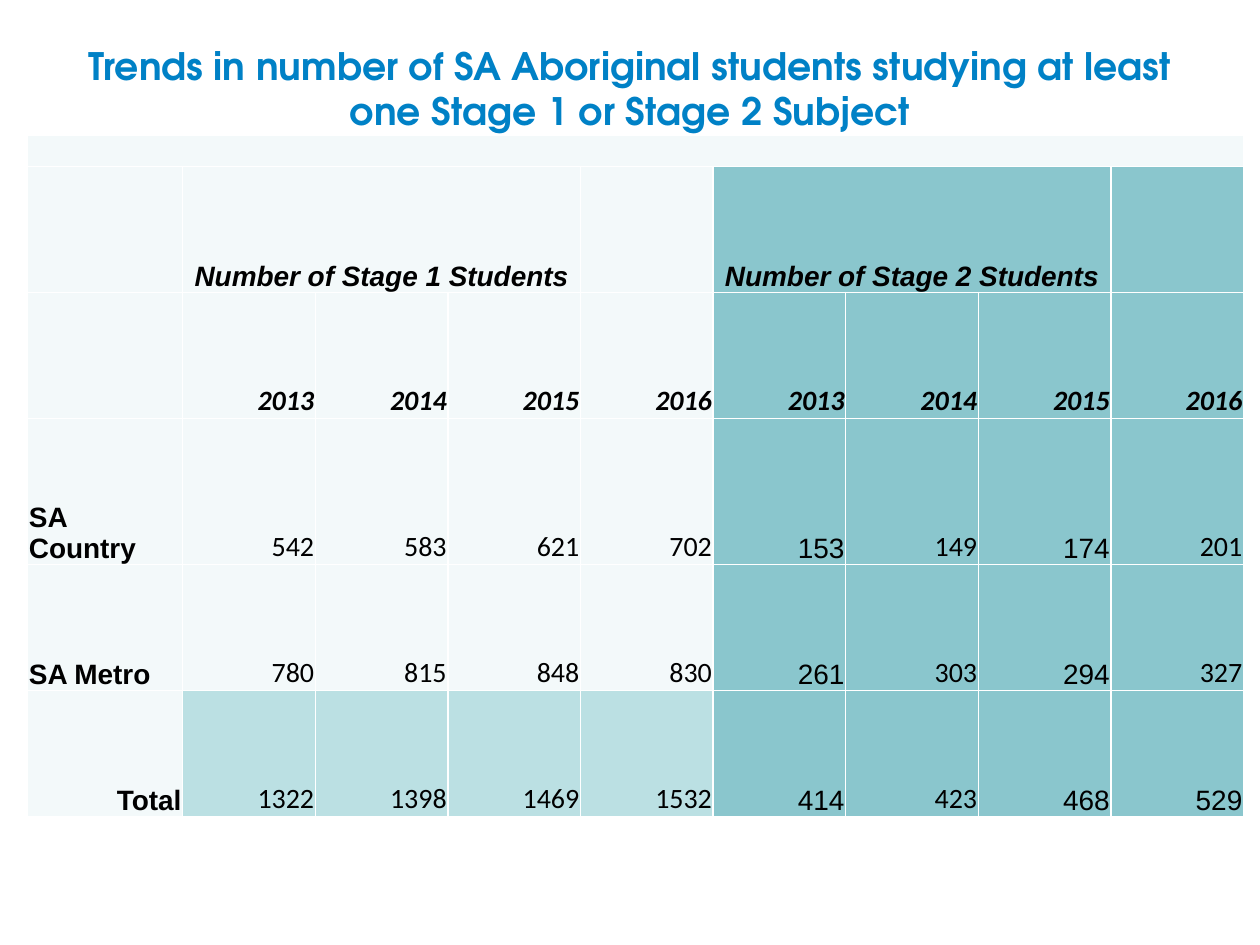
import lxml.etree
import pptx
import pptx.dml.color
import pptx.enum.text
import pptx.oxml.ns
import pptx.util

ALIGN = pptx.enum.text.PP_ALIGN
ANCHOR = pptx.enum.text.MSO_ANCHOR
PALE, LIGHT, TEAL = "F3F9FA", "BBE0E3", "8AC6CD"


def rgb(colour):
    return pptx.dml.color.RGBColor.from_string(colour)


def add_borders(cell, colour, points):
    properties = cell._tc.get_or_add_tcPr()
    for position, side in enumerate(("lnL", "lnR", "lnT", "lnB")):
        line = lxml.etree.Element(pptx.oxml.ns.qn(f"a:{side}"), w=str(pptx.util.Pt(points)))
        fill = lxml.etree.SubElement(line, pptx.oxml.ns.qn("a:solidFill"))
        lxml.etree.SubElement(fill, pptx.oxml.ns.qn("a:srgbClr"), val=colour)
        properties.insert(position, line)


deck = pptx.Presentation()
deck.slide_width = pptx.util.Inches(10)
deck.slide_height = pptx.util.Inches(7.5)
slide = deck.slides.add_slide(deck.slide_layouts[5])

# Title
title = slide.shapes.title
title_place = {"left": 0.5, "top": 0.03, "width": 9, "height": 1.33}
for name, inches in title_place.items():
    setattr(title, name, pptx.util.Inches(inches))
heading = title.text_frame
heading.text = "Trends in number of SA Aboriginal students studying at least one Stage 1 or Stage 2 Subject"
frame_format = {
    "word_wrap": True,
    "auto_size": pptx.enum.text.MSO_AUTO_SIZE.NONE,
    "vertical_anchor": ANCHOR.MIDDLE,
}
for name, value in frame_format.items():
    setattr(heading, name, value)
heading.paragraphs[0].alignment = ALIGN.CENTER
title_font = heading.paragraphs[0].runs[0].font
title_format = {"name": "TeX Gyre Adventor", "size": pptx.util.Pt(21.6), "bold": True}
for name, value in title_format.items():
    setattr(title_font, name, value)
title_font.color.rgb = rgb("0081C6")

# Student numbers: a label column, four Stage 1 years, four Stage 2 years
years = ["2013", "2014", "2015", "2016"]
student_rows = [
    [""] * 9,
    ["", "Number of Stage 1 Students", "", "", "", "Number of Stage 2 Students", "", "", ""],
    ["", *years, *years],
    ["SA Country", "542", "583", "621", "702", "153", "149", "174", "201"],
    ["SA Metro", "780", "815", "848", "830", "261", "303", "294", "327"],
    ["Total", "1322", "1398", "1469", "1532", "414", "423", "468", "529"],
]
column_widths = [1.23] + [1.0525] * 8
row_heights = [0.25, 1, 1, 1.16, 1, 1]
SPAN, STAGES, YEARS, TOTAL = 0, 1, 2, 5
FIRST_STAGE_2 = 5
arial_numbers = {(row, col) for row in (3, 4, 5) for col in (5, 7)} | {(TOTAL, 8)}

students = slide.shapes.add_table(
    len(row_heights), len(column_widths),
    pptx.util.Inches(0.22), pptx.util.Inches(1.07),
    pptx.util.Inches(sum(column_widths)), pptx.util.Inches(sum(row_heights)),
).table
students.first_row = False
students.horz_banding = False
for column, width in zip(students.columns, column_widths):
    column.width = pptx.util.Inches(width)
for row, height in zip(students.rows, row_heights):
    row.height = pptx.util.Inches(height)

cell_format = {
    "margin_left": pptx.util.Inches(0.01),
    "margin_right": pptx.util.Inches(0.01),
    "margin_top": pptx.util.Inches(0.01),
    "margin_bottom": 0,
    "vertical_anchor": ANCHOR.BOTTOM,
}
for row, texts in enumerate(student_rows):
    for col, text in enumerate(texts):
        cell = students.cell(row, col)
        for name, value in cell_format.items():
            setattr(cell, name, value)
        if row > SPAN and col >= FIRST_STAGE_2:
            fill = TEAL
        elif row == TOTAL and col > 0:
            fill = LIGHT
        else:
            fill = PALE
        cell.fill.solid()
        cell.fill.fore_color.rgb = rgb(fill)
        add_borders(cell, "FFFFFF", 1)

        paragraph = cell.text_frame.paragraphs[0]
        if not text:
            paragraph.font.size = pptx.util.Pt(10)
            continue
        if row == STAGES:
            paragraph.alignment = ALIGN.CENTER
        elif col == 0 and row != TOTAL:
            paragraph.alignment = ALIGN.LEFT
        else:
            paragraph.alignment = ALIGN.RIGHT
        run = paragraph.add_run()
        run.text = text
        arial = row == STAGES or col == 0 or (row, col) in arial_numbers
        text_format = {
            "name": "Arial" if arial else "Calibri",
            "size": pptx.util.Pt(16),
            "bold": row <= YEARS or col == 0,
            "italic": row <= YEARS,
        }
        for name, value in text_format.items():
            setattr(run.font, name, value)
        run.font.color.rgb = rgb("000000")

students.cell(SPAN, 0).merge(students.cell(SPAN, 8))
for first in (1, FIRST_STAGE_2):
    students.cell(STAGES, first).merge(students.cell(STAGES, first + 2))

deck.save("out.pptx")
